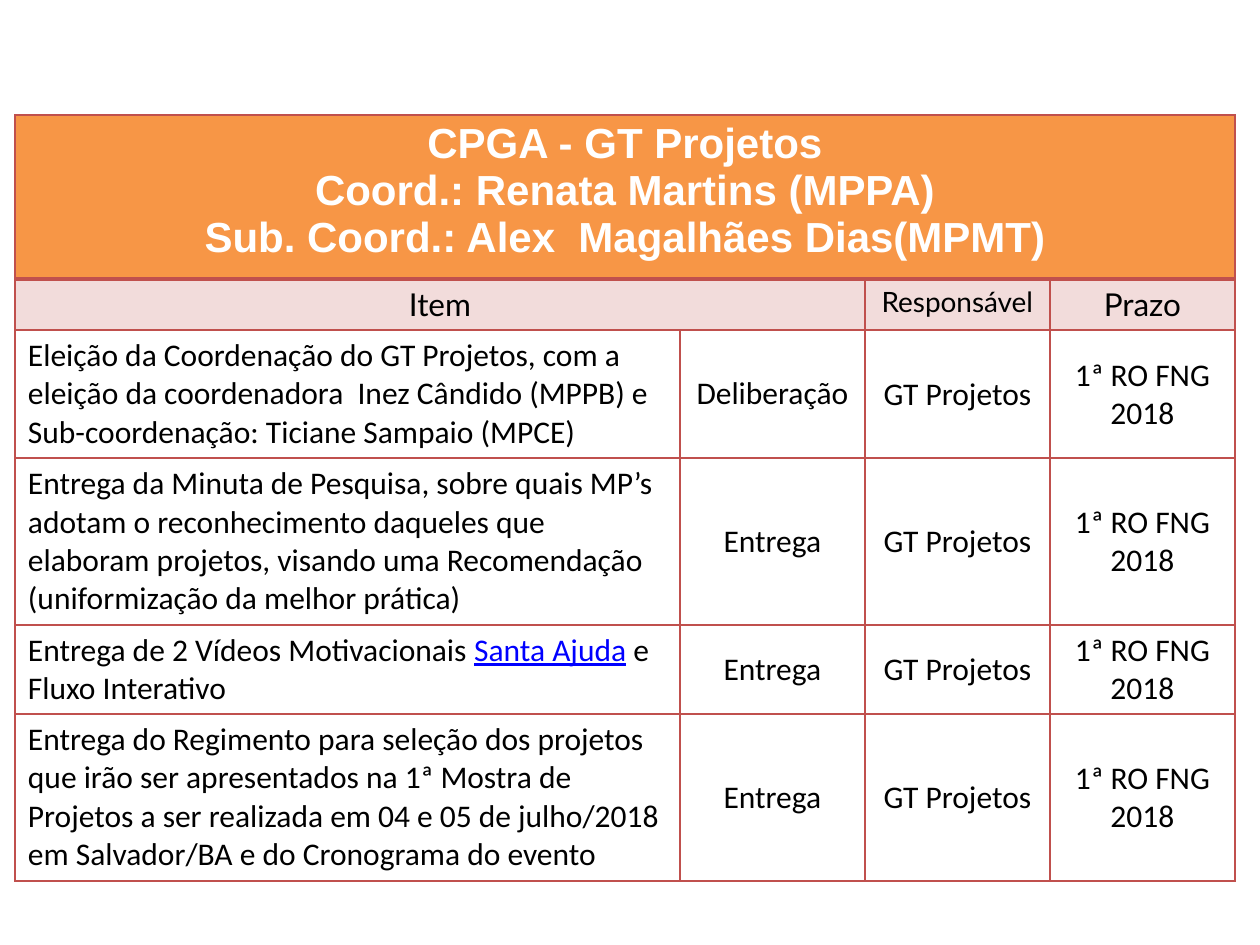
from dataclasses import dataclass

from lxml import etree
from pptx import Presentation
from pptx import util as u
from pptx.dml.color import RGBColor
from pptx.enum import text
from pptx.oxml.ns import qn

DPI = 126


def px(n: int) -> int:
    return round(n * u.Inches(1) / DPI)


@dataclass(frozen=True)
class Theme:
    head: str = "F79646"
    line: str = "C0504D"
    white: str = "FFFFFF"
    ink: str = "000000"
    link: str = "0000FF"
    tint: int = 20
    big: int = 24
    body: int = 18
    small: int = 16


@dataclass(frozen=True)
class Style:
    font: str
    size: int
    color: str = "000000"
    bold: bool = False
    fill: str = ""
    alpha: int = 100
    center: bool = True
    middle: bool = False
    inset: tuple[int, int, int, int] = (13, 6, 13, 6)
    rule: int = 1  # weight of the bottom border


@dataclass(frozen=True)
class Task:
    item: tuple[str, ...]  # every second part is underlined
    kind: str = "Entrega"
    owner: str = "GT Projetos"
    due: str = "1ª RO FNG 2018"


T = Theme()
TITLE = Style("Arial", T.big, T.white, bold=True, fill=T.head, rule=2)
LABEL = Style("Lato", T.body, T.ink, fill=T.line, alpha=T.tint)
SMALL = Style("Lato", T.small, T.ink, fill=T.line, alpha=T.tint)
ITEM = Style("Calibri", T.body, T.ink, center=False, middle=True)
KIND = Style("Calibri", T.body, T.ink, middle=True)
TIGHT = Style("Calibri", T.body, T.ink, middle=True, inset=(1, 1, 1, 0))

LEFT, TOP = 15, 115
COLS = (665, 185, 185, 185)
ROWS = (164, 51, 128, 167, 89, 167)

HEADS = ("CPGA - GT Projetos", "Coord.: Renata Martins (MPPA)",
         "Sub. Coord.: Alex  Magalhães Dias(MPMT)")
TASKS = (
    Task(("Eleição da Coordenação do GT Projetos, com a eleição da coordenadora  "
          "Inez Cândido (MPPB) e Sub-coordenação: Ticiane Sampaio (MPCE)",),
         "Deliberação"),
    Task(("Entrega da Minuta de Pesquisa, sobre quais MP’s adotam o "
          "reconhecimento daqueles que elaboram projetos, visando uma "
          "Recomendação (uniformização da melhor prática)",)),
    Task(("Entrega de 2 Vídeos Motivacionais ", "Santa Ajuda",
          " e Fluxo Interativo")),
    Task(("Entrega do Regimento para seleção dos projetos que irão ser "
          "apresentados na 1ª Mostra de Projetos a ser realizada em 04 e 05 "
          "de julho/2018 em Salvador/BA e do Cronograma do evento",)),
)


def edge(cell, style: Style, top: int) -> None:
    """Draw the four borders; they come before the fill in the cell."""
    props = cell._tc.get_or_add_tcPr()
    sides = (("lnL", 1), ("lnR", 1), ("lnT", top), ("lnB", style.rule))
    for i, (side, width) in enumerate(sides):
        line = etree.Element(qn(f"a:{side}"), w=str(u.Pt(width)))
        fill = etree.SubElement(line, qn("a:solidFill"))
        etree.SubElement(fill, qn("a:srgbClr"), val=T.line)
        props.insert(i, line)


def paint(cell, style: Style, top: int = 1) -> None:
    if style.fill:
        cell.fill.solid()
        cell.fill.fore_color.rgb = RGBColor.from_string(style.fill)
        if style.alpha < 100:
            tone = cell._tc.tcPr.find(".//" + qn("a:srgbClr"))
            etree.SubElement(tone, qn("a:alpha"), val=str(style.alpha * 1000))
    else:
        cell.fill.background()
    edge(cell, style, top)


def write(cell, style: Style, lines: tuple[tuple[str, ...], ...]) -> None:
    (cell.margin_left, cell.margin_top,
     cell.margin_right, cell.margin_bottom) = map(px, style.inset)
    anchor = text.MSO_ANCHOR
    cell.vertical_anchor = anchor.MIDDLE if style.middle else anchor.TOP
    frame = cell.text_frame
    for i, parts in enumerate(lines):
        para = frame.add_paragraph() if i else frame.paragraphs[0]
        align = text.PP_ALIGN
        para.alignment = align.CENTER if style.center else align.LEFT
        font = para.font
        font.name, font.size, font.bold = style.font, u.Pt(style.size), style.bold
        font.color.rgb = RGBColor.from_string(style.color)
        for j, part in enumerate(parts):
            run = para.add_run()
            run.text = part
            if j % 2:
                run.font.underline = True
                run.font.color.rgb = RGBColor.from_string(T.link)


def main() -> None:
    deck = Presentation()
    deck.slide_width, deck.slide_height = u.Inches(10), u.Inches(7.5)
    slide = deck.slides.add_slide(deck.slide_layouts[6])

    # Grid
    grid = slide.shapes.add_table(len(ROWS), len(COLS), px(LEFT), px(TOP),
                                  px(sum(COLS)), px(sum(ROWS))).table
    grid.first_row = grid.horz_banding = False
    for col, width in zip(grid.columns, COLS):
        col.width = px(width)
    for row, height in zip(grid.rows, ROWS):
        row.height = px(height)

    # Fills and borders
    looks = [(TITLE,) * 4, (LABEL, LABEL, SMALL, LABEL)]
    looks += [(ITEM, KIND, TIGHT, TIGHT)] * len(TASKS)
    for r, styles in enumerate(looks):
        for c, style in enumerate(styles):
            paint(grid.cell(r, c), style, TITLE.rule if r == 1 else 1)

    # Title and column heads
    grid.cell(0, 0).merge(grid.cell(0, 3))
    grid.cell(1, 0).merge(grid.cell(1, 1))
    write(grid.cell(0, 0), TITLE, tuple((head,) for head in HEADS))
    for c, label in ((0, "Item"), (2, "Responsável"), (3, "Prazo")):
        write(grid.cell(1, c), looks[1][c], ((label,),))

    # Tasks
    for r, task in enumerate(TASKS, 2):
        cells = (task.item, (task.kind,), (task.owner,), (task.due,))
        for c, parts in enumerate(cells):
            write(grid.cell(r, c), looks[r][c], (parts,))

    deck.save("out.pptx")


if __name__ == "__main__":
    main()
